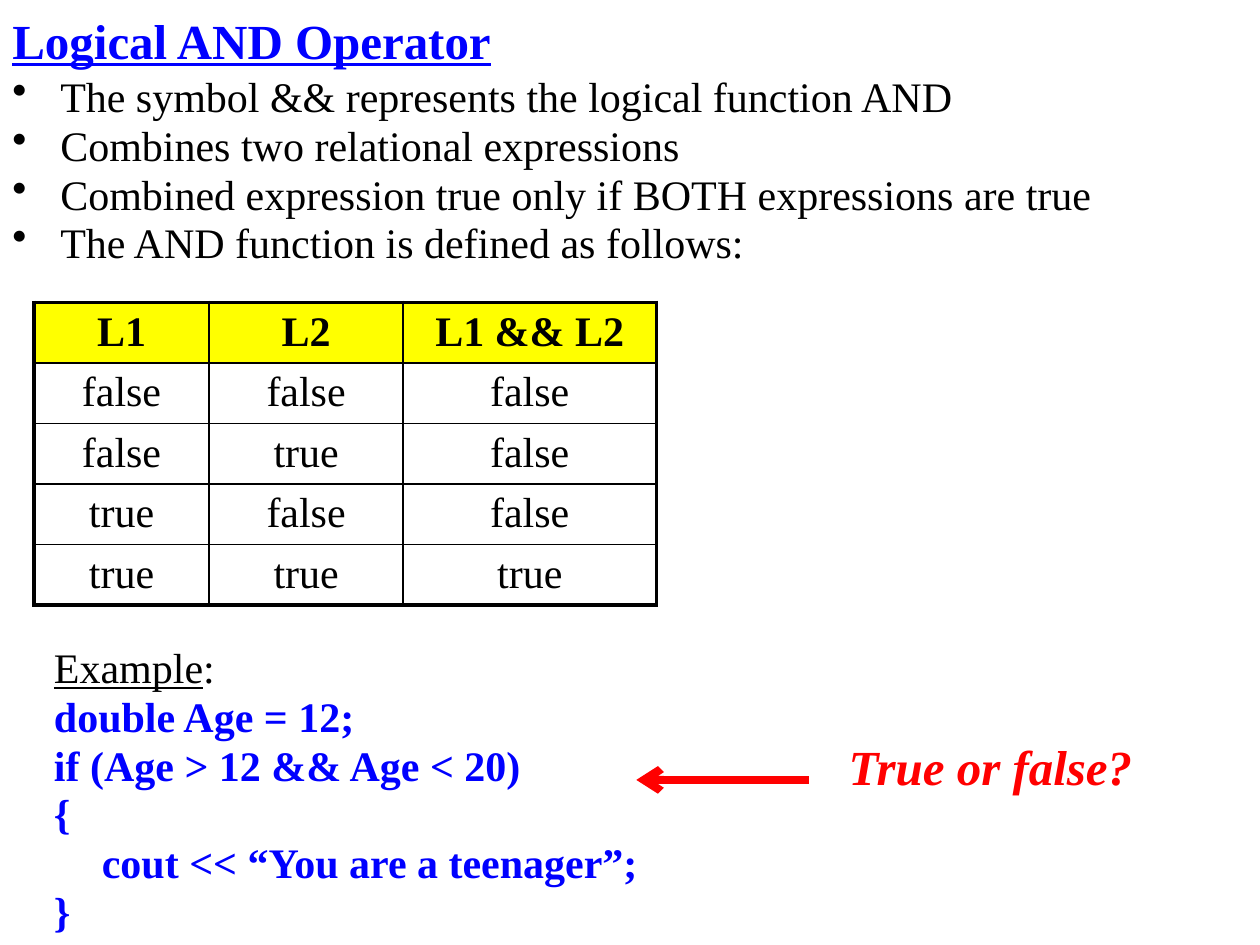
from lxml.etree import SubElement
from pptx import Presentation
from pptx.dml.color import RGBColor
from pptx.enum.shapes import MSO_CONNECTOR
from pptx.enum.text import MSO_ANCHOR, PP_ALIGN
from pptx.oxml.ns import qn
from pptx.util import Inches, Pt

BLACK, BLUE, RED, YELLOW = "000000", "0000FF", "FF0000", "FFFF00"
FONT = "Times New Roman"

PLAIN = {"size": Pt(24)}
HEADER = {"size": Pt(24), "bold": True}
CODE = {**HEADER, "color": BLUE}
TITLE = {"size": Pt(28), "bold": True, "underline": True, "color": BLUE}
QUESTION = {"size": Pt(28), "bold": True, "italic": True, "color": RED}

title = [[("Logical AND Operator", TITLE)]]
bullets = [
    [(text, PLAIN)]
    for text in (
        "The symbol && represents the logical function AND",
        "Combines two relational expressions",
        "Combined expression true only if BOTH expressions are true",
        "The AND function is defined as follows:",
    )
]
code_lines = (
    "double Age = 12;",
    "if (Age > 12 && Age < 20)",
    "{",
    "\tcout << “You are a teenager”;",
    "}",
)
example = [[("Example", {**PLAIN, "underline": True}), (":", PLAIN)]]
example += [[(line, CODE)] for line in code_lines]
question = [[("True or false?", QUESTION)]]

truth_table = [
    ("L1", "L2", "L1 && L2"),
    ("false", "false", "false"),
    ("false", "true", "false"),
    ("true", "false", "false"),
    ("true", "true", "true"),
]
column_widths = (1.39, 1.54, 2.01)
row_height = 0.47


def color(value):
    return RGBColor.from_string(value)


def add_run(paragraph, text, style):
    run = paragraph.add_run()
    run.text = text
    values = {"name": FONT, "color": BLACK, **style}
    run.font.color.rgb = color(values.pop("color"))
    for name, value in values.items():
        setattr(run.font, name, value)


def set_list_layout(paragraph, bullet):
    paragraph.line_spacing = 0.8
    paragraph.space_before = Pt(0)
    properties = paragraph._p.get_or_add_pPr()
    properties.set("marL", str(Inches(0.38)))
    properties.set("indent", str(-Inches(0.38)))
    spacing = properties.find(qn("a:spcBef"))
    spacing.remove(spacing[0])
    SubElement(spacing, qn("a:spcPct"), val="20000")
    if bullet:
        SubElement(properties, qn("a:buChar"), char=bullet)


def add_text(slide, box, paragraphs, listed=False, bullet=None,
             anchor=MSO_ANCHOR.TOP, align=PP_ALIGN.LEFT, wrap=True):
    shape = slide.shapes.add_textbox(*map(Inches, box))
    frame = shape.text_frame
    frame.word_wrap = wrap
    frame.vertical_anchor = anchor
    for index, runs in enumerate(paragraphs):
        paragraph = frame.add_paragraph() if index else frame.paragraphs[0]
        paragraph.alignment = align
        if listed:
            set_list_layout(paragraph, bullet)
        for text, style in runs:
            add_run(paragraph, text, style)


def set_borders(cell, outer_sides):
    properties = cell._tc.get_or_add_tcPr()
    for side in ("L", "R", "T", "B"):
        width = Pt(2.25 if outer_sides[side] else 1)
        line = SubElement(properties, qn(f"a:ln{side}"), w=str(width))
        fill = SubElement(line, qn("a:solidFill"))
        SubElement(fill, qn("a:srgbClr"), val=BLACK)


def add_truth_table(slide, left, top):
    row_count, column_count = len(truth_table), len(column_widths)
    size = (sum(column_widths), row_height * row_count)
    table = slide.shapes.add_table(
        row_count, column_count, *map(Inches, (left, top, *size))
    ).table
    table.first_row = table.horz_banding = False
    for column, width in zip(table.columns, column_widths):
        column.width = Inches(width)
    for row_index, values in enumerate(truth_table):
        table.rows[row_index].height = Inches(row_height)
        for column_index, text in enumerate(values):
            cell = table.cell(row_index, column_index)
            cell.margin_top, cell.margin_bottom = Inches(0.05), Inches(0.03)
            set_borders(cell, {
                "L": column_index == 0,
                "R": column_index == column_count - 1,
                "T": row_index == 0,
                "B": row_index == row_count - 1,
            })
            if row_index == 0:
                cell.fill.solid()
                cell.fill.fore_color.rgb = color(YELLOW)
            else:
                cell.fill.background()
            paragraph = cell.text_frame.paragraphs[0]
            paragraph.alignment = PP_ALIGN.CENTER
            add_run(paragraph, text, PLAIN if row_index else HEADER)


def add_arrow(slide, start, end):
    arrow = slide.shapes.add_connector(
        MSO_CONNECTOR.STRAIGHT, *map(Inches, (*start, *end))
    )
    arrow.line.color.rgb = color(RED)
    arrow.line.width = Pt(4.5)
    SubElement(arrow.line._get_or_add_ln(), qn("a:tailEnd"), type="arrow")
    SubElement(arrow._element.spPr, qn("a:effectLst"))


def main():
    presentation = Presentation()
    presentation.slide_width, presentation.slide_height = Inches(10), Inches(7.5)
    slide = presentation.slides.add_slide(presentation.slide_layouts[6])
    add_text(slide, (0, 0.04, 4.39, 0.55), title, anchor=MSO_ANCHOR.MIDDLE)
    add_text(slide, (0, 0.59, 9.75, 1.67), bullets, listed=True, bullet="•")
    add_truth_table(slide, 0.27, 2.4)
    add_text(slide, (0.33, 5.12, 4.88, 2.38), example, listed=True)
    add_arrow(slide, (6.42, 6.19), (5.05, 6.19))
    add_text(slide, (6.62, 5.8, 2.48, 0.57), question,
             align=PP_ALIGN.CENTER, wrap=False)
    presentation.save("out.pptx")


if __name__ == "__main__":
    main()
